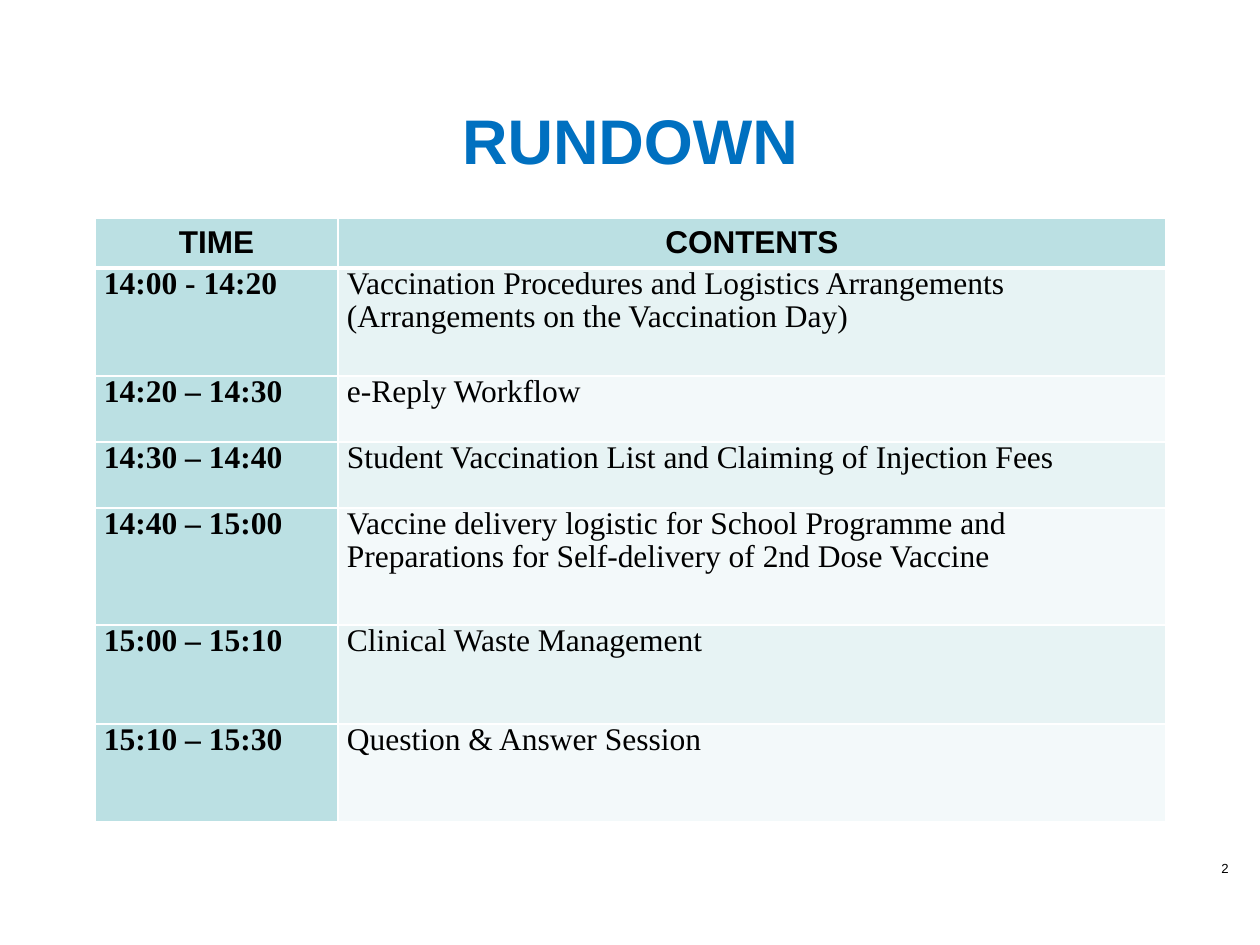
from dataclasses import dataclass
from typing import NamedTuple

from lxml.etree import SubElement
from pptx import Presentation
from pptx.dml.color import RGBColor
from pptx.enum.text import MSO_ANCHOR as Anchor, PP_ALIGN as Align
from pptx.oxml.ns import qn
from pptx.util import Emu, Pt

EMU_PER_PX = 914400 / 126


def px(length: int) -> Emu:
    return Emu(round(length * EMU_PER_PX))


@dataclass(frozen=True)
class Theme:
    heading_font: str = "Arial"
    body_font: str = "Times New Roman"
    ink: str = "000000"
    title: str = "0070C0"
    accent: str = "BBE0E3"
    bands: tuple = ("E7F3F4", "F3F9FA")
    border: str = "FFFFFF"
    title_size: float = 36
    table_size: float = 18
    number_size: float = 7.5


class Session(NamedTuple):
    time: str
    contents: tuple
    height: int


class Box(NamedTuple):
    left: int
    top: int
    width: int
    height: int


THEME = Theme()
TITLE_BOX = Box(63, 92, 1134, 94)
TABLE_BOX = Box(95, 218, 1071, 604)
NUMBER_BOX = Box(948, 854, 293, 66)
TIME_WIDTH = 243
HEADER_HEIGHT = 50
SESSIONS = (
    Session("14:00 - 14:20", ("Vaccination Procedures and Logistics Arrangements",
                              "(Arrangements on the Vaccination Day)"), 108),
    Session("14:20 – 14:30", ("e-Reply Workflow",), 66),
    Session("14:30 – 14:40", ("Student Vaccination List and Claiming of Injection Fees",), 66),
    Session("14:40 – 15:00", ("Vaccine delivery logistic for School Programme and",
                              "Preparations for Self-delivery of 2nd Dose Vaccine"), 117),
    Session("15:00 – 15:10", ("Clinical Waste Management",), 99),
    Session("15:10 – 15:30", ("Question & Answer Session",), 98),
)


def apply(target, values: dict) -> None:
    for name, value in values.items():
        setattr(target, name, value)


def place(shape, box: Box) -> None:
    apply(shape, {name: px(length) for name, length in box._asdict().items()})


def write(frame, lines: tuple, font: str, size: float, color: str,
          bold: bool = False, align=Align.LEFT, spacing: float = 1.0) -> None:
    for index, line in enumerate(lines):
        para = frame.paragraphs[0] if index == 0 else frame.add_paragraph()
        apply(para, {"alignment": align, "line_spacing": spacing,
                     "space_before": Pt(0), "space_after": Pt(0)})
        span = para.add_run()
        span.text = line
        apply(span.font, {"name": font, "size": Pt(size), "bold": bold})
        span.font.color.rgb = RGBColor.from_string(color)


def style_cell(cell, fill: str, inset: int, anchor, bottom: int = 1, top: int = 1) -> None:
    apply(cell, {"margin_left": px(inset), "margin_right": px(inset),
                 "margin_top": 0, "margin_bottom": 0, "vertical_anchor": anchor})
    properties = cell._tc.get_or_add_tcPr()
    for side, width in {"L": 1, "R": 1, "T": top, "B": bottom}.items():
        line = SubElement(properties, qn(f"a:ln{side}"), w=str(Pt(width)))
        solid = SubElement(line, qn("a:solidFill"))
        SubElement(solid, qn("a:srgbClr"), val=THEME.border)
    cell.fill.solid()
    cell.fill.fore_color.rgb = RGBColor.from_string(fill)


def add_title(page) -> None:
    title = page.shapes.title
    place(title, TITLE_BOX)
    apply(title.text_frame, {"word_wrap": True, "vertical_anchor": Anchor.MIDDLE})
    write(title.text_frame, ("RUNDOWN",), THEME.heading_font, THEME.title_size,
          THEME.title, True, Align.CENTER)


def add_schedule(page) -> None:
    frame = page.shapes.add_table(len(SESSIONS) + 1, 2, *map(px, TABLE_BOX))
    table = frame.table
    for column, width in zip(table.columns, (TIME_WIDTH, TABLE_BOX.width - TIME_WIDTH)):
        column.width = px(width)
    table.rows[0].height = px(HEADER_HEIGHT)
    for column, heading in enumerate(("TIME", "CONTENTS")):
        cell = table.cell(0, column)
        style_cell(cell, THEME.accent, 13, Anchor.MIDDLE, bottom=3)
        write(cell.text_frame, (heading,), THEME.heading_font, THEME.table_size,
              THEME.ink, True, Align.CENTER)
    for row, session in enumerate(SESSIONS, 1):
        table.rows[row].height = px(session.height)
        band = THEME.bands[(row - 1) % 2]
        columns = (((session.time,), THEME.accent, True), (session.contents, band, False))
        for column, (lines, fill, bold) in enumerate(columns):
            cell = table.cell(row, column)
            style_cell(cell, fill, 9, Anchor.TOP, top=3 if row == 1 else 1)
            write(cell.text_frame, lines, THEME.body_font, THEME.table_size,
                  THEME.ink, bold, spacing=0.95)


def add_page_number(page) -> None:
    box = page.shapes.add_textbox(*map(px, NUMBER_BOX))
    box.text_frame.word_wrap = True
    write(box.text_frame, ("2",), THEME.heading_font, THEME.number_size,
          THEME.ink, align=Align.RIGHT)


def main() -> None:
    deck = Presentation()
    apply(deck, {"slide_width": px(1260), "slide_height": px(945)})
    page = deck.slides.add_slide(deck.slide_layouts[5])
    add_page_number(page)
    add_title(page)
    add_schedule(page)
    deck.save("out.pptx")


if __name__ == "__main__":
    main()
